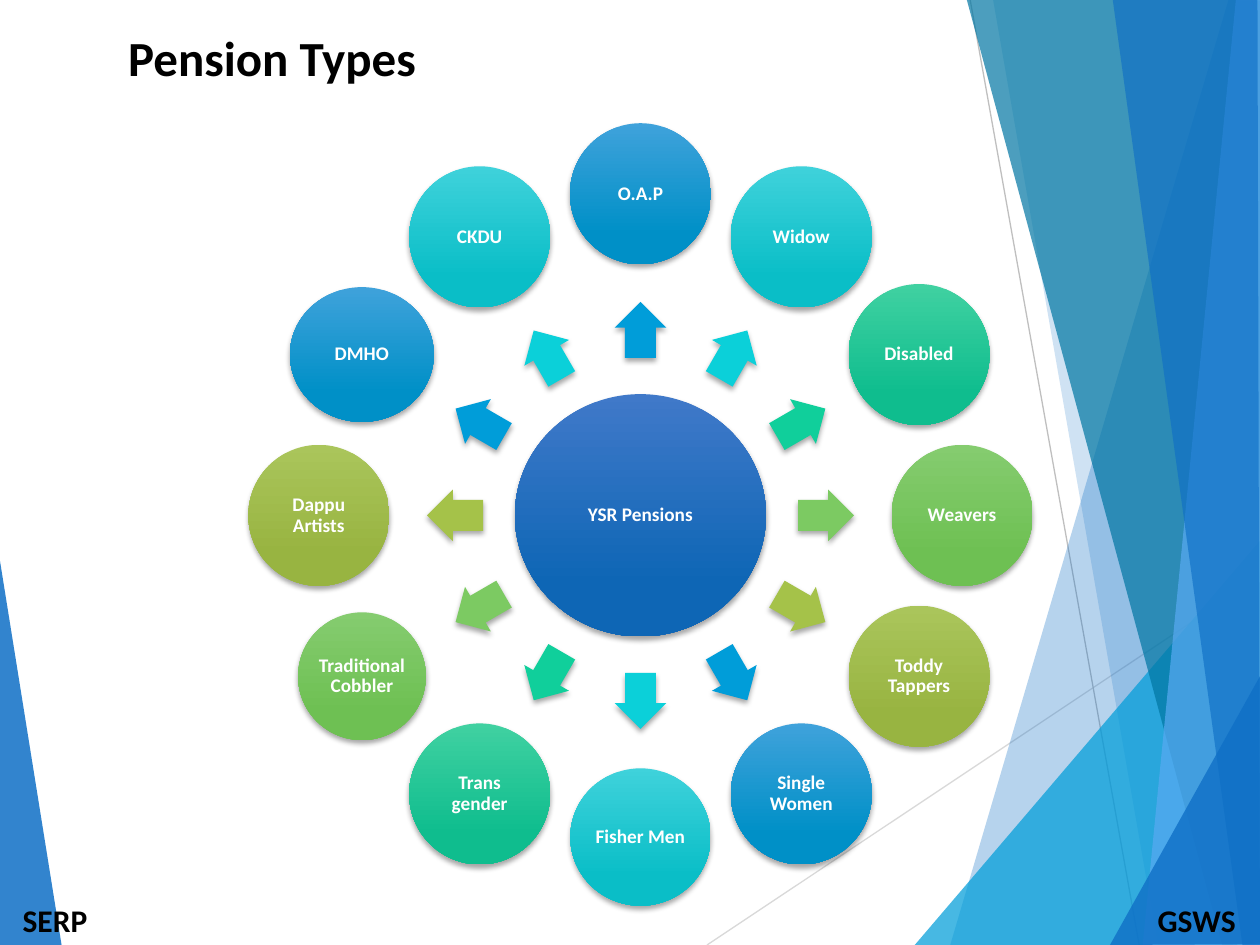
from dataclasses import dataclass
from math import cos, radians, sin
from typing import Any

from lxml import etree
from pptx import Presentation
from pptx import util as u
from pptx.dml import color
from pptx.enum import shapes, text
from pptx.oxml import ns

Point = tuple[float, float]
WIDTH, HEIGHT = 720, 540
CENTER_X, CENTER_Y = 366, 294.5
CIRCLE_RADIUS, ARROW_RADIUS = 183.8, 106
ARROW_SIZE = (32, 29.5)


@dataclass
class Facet:
    points: list[Point]
    fill: str
    opacity: int


@dataclass
class Tone:
    arrow: str
    top: str
    bottom: str


@dataclass
class Pension:
    name: str
    width: float = 80.6
    height: float = 80.6


@dataclass
class Label:
    words: str
    left: float
    top: float
    width: float
    height: float
    size: int
    wrap: bool = False


LEFT_FACET = Facet([(-0.7, 316), (35.3, 540.5), (-0.7, 540)], "0F6FC6", 85)
THIN_LINES = [
    ((404, 540), (720.7, 329), "D9D9D9"),
    ((554.4, 0), (651, 540), "BFBFBF"),
]
RIGHT_FACETS = [
    Facet([(702, 0), (543, 540), (721, 540.5), (720.7, 0.5)], "0F6FC6", 30),
    Facet([(567.4, -0.7), (661.7, 540), (720.7, 540), (720.7, -0.7)], "0F6FC6", 20),
    Facet([(522.7, 540), (720, 309), (720.7, 540)], "009DD9", 72),
    Facet([(552.3, -0.7), (698.4, 540), (720.7, 539.5), (720.7, -0.7)], "0076A3", 70),
    Facet([(706.3, -0.7), (653, 540), (720.7, 540), (720, -0.7)], "59AAF2", 70),
    Facet([(635.8, -0.7), (710, 540), (720, 540), (718.6, -0.7)], "0F6FC6", 65),
    Facet([(634.3, 540), (720.7, 385.2), (720.7, 539.5)], "0F6FC6", 80),
]
HUB = Pension("YSR Pensions", 143.5, 138.5)
HUB_TONE = Tone("0F6FC6", "4079C9", "0E66B5")
TONES = [
    Tone("009DD9", "3FA2DB", "0090C7"),
    Tone("0BD0D9", "3FD2DB", "0ABEC7"),
    Tone("10CF9B", "40D1A1", "0FBD8E"),
    Tone("7CCA62", "85CC6F", "6EC053"),
    Tone("A5C249", "AAC55B", "98B441"),
]
# Clockwise from the top
PENSIONS = [
    Pension("O.A.P"), Pension("Widow"), Pension("Disabled"), Pension("Weavers"),
    Pension("Toddy Tappers"), Pension("Single Women"),
    Pension("Fisher Men", 80.2, 78.5), Pension("Trans gender"),
    Pension("Traditional Cobbler", 73, 73), Pension("Dappu Artists"),
    Pension("DMHO", 82.2, 77), Pension("CKDU"),
]
LABELS = [
    Label("Pension Types", 66.2, 12.2, 378, 41, 28, True),
    Label("GSWS", 654.5, 511.2, 59.8, 28.8, 18),
    Label("SERP", 5.8, 511.2, 51.8, 28.8, 18),
]


def rgb(value: str) -> color.RGBColor:
    return color.RGBColor.from_string(value)


def apply(target: Any, values: dict[str, Any]) -> None:
    for name, value in values.items():
        setattr(target, name, value)


def add_child(parent: Any, tag: str, **attributes: Any) -> Any:
    values = {name: str(value) for name, value in attributes.items()}
    return etree.SubElement(parent, ns.qn(tag), values)


def write(shape: Any, words: str, size: int, font_color: str,
          paragraph_format: dict[str, Any]) -> None:
    paragraph = shape.text_frame.paragraphs[0]
    apply(paragraph, paragraph_format)
    run = paragraph.add_run()
    run.text = words
    apply(run.font, {"name": "Calibri", "size": u.Pt(size), "bold": True})
    run.font.color.rgb = rgb(font_color)


def add_facet(slide: Any, facet: Facet) -> None:
    corners = [(u.Pt(x), u.Pt(y)) for x, y in facet.points]
    builder = slide.shapes.build_freeform(*corners[0], scale=1.0)
    builder.add_line_segments(corners[1:], close=True)
    shape = builder.convert_to_shape()
    shape.shadow.inherit = False
    shape.line.fill.background()
    shape.fill.solid()
    shape.fill.fore_color.rgb = rgb(facet.fill)
    fill_color = next(shape._element.spPr.iter(ns.qn("a:srgbClr")))
    add_child(fill_color, "a:alpha", val=facet.opacity * 1000)


def add_thin_line(slide: Any, start: Point, end: Point, line_color: str) -> None:
    ends = [u.Pt(value) for value in (*start, *end)]
    line = slide.shapes.add_connector(shapes.MSO_CONNECTOR.STRAIGHT, *ends)
    line.line.width = u.Pt(0.75)
    line.line.color.rgb = rgb(line_color)
    add_child(line._element.spPr, "a:effectLst")


def add_shadowed(slide: Any, kind: Any, center: Point, width: float, height: float) -> Any:
    x, y = center
    box = [u.Pt(value) for value in (x - width / 2, y - height / 2, width, height)]
    shape = slide.shapes.add_shape(kind, *box)
    shape.line.fill.background()
    shape.shadow.inherit = False
    effects = shape._element.spPr.find(ns.qn("a:effectLst"))
    shadow = add_child(effects, "a:outerShdw", blurRad=u.Pt(3), dist=u.Pt(2),
                       dir=90 * 60000, rotWithShape=0)
    shadow_color = add_child(shadow, "a:srgbClr", val="000000")
    add_child(shadow_color, "a:alpha", val=35000)
    return shape


def add_circle(slide: Any, pension: Pension, tone: Tone, center: Point) -> None:
    circle = add_shadowed(slide, shapes.MSO_SHAPE.OVAL, center, pension.width, pension.height)
    circle.fill.gradient()
    circle.fill.gradient_angle = 270
    for stop, position, value in zip(circle.fill.gradient_stops, (0, 0.78), (tone.top, tone.bottom)):
        stop.position = position
        stop.color.rgb = rgb(value)
    # Narrow side margins keep the longest word on one line
    apply(circle.text_frame, {"margin_left": 0, "margin_right": 0,
                              "margin_top": u.Pt(1.4), "margin_bottom": u.Pt(1.4),
                              "word_wrap": True,
                              "vertical_anchor": text.MSO_ANCHOR.MIDDLE})
    write(circle, pension.name, 11, "FFFFFF",
          {"alignment": text.PP_ALIGN.CENTER, "line_spacing": 0.9})


def add_arrow(slide: Any, tone: Tone, center: Point, angle: float) -> None:
    arrow = add_shadowed(slide, shapes.MSO_SHAPE.RIGHT_ARROW, center, *ARROW_SIZE)
    arrow.rotation = angle
    arrow.adjustments[0], arrow.adjustments[1] = 0.6, 0.5
    arrow.fill.solid()
    arrow.fill.fore_color.rgb = rgb(tone.arrow)


def add_label(slide: Any, label: Label) -> None:
    box = [u.Pt(value) for value in (label.left, label.top, label.width, label.height)]
    shape = slide.shapes.add_textbox(*box)
    apply(shape.text_frame, {"word_wrap": label.wrap,
                             "auto_size": text.MSO_AUTO_SIZE.SHAPE_TO_FIT_TEXT})
    write(shape, label.words, label.size, "000000", {"alignment": text.PP_ALIGN.LEFT})


def on_ring(radius: float, angle: float) -> Point:
    return (CENTER_X + radius * cos(radians(angle)),
            CENTER_Y + radius * sin(radians(angle)))


def main() -> None:
    presentation = Presentation()
    apply(presentation, {"slide_width": u.Pt(WIDTH), "slide_height": u.Pt(HEIGHT)})
    slide = presentation.slides.add_slide(presentation.slide_layouts[6])

    # Faceted backdrop
    add_facet(slide, LEFT_FACET)
    for start, end, line_color in THIN_LINES:
        add_thin_line(slide, start, end, line_color)
    for facet in RIGHT_FACETS:
        add_facet(slide, facet)

    # Hub with its ring of pension types
    add_circle(slide, HUB, HUB_TONE, (CENTER_X, CENTER_Y))
    for index, pension in enumerate(PENSIONS):
        angle = (270 + index * 360 / len(PENSIONS)) % 360
        tone = TONES[index % len(TONES)]
        add_arrow(slide, tone, on_ring(ARROW_RADIUS, angle), angle)
        add_circle(slide, pension, tone, on_ring(CIRCLE_RADIUS, angle))

    # Title and corner labels
    for label in LABELS:
        add_label(slide, label)

    presentation.save("out.pptx")


if __name__ == "__main__":
    main()
